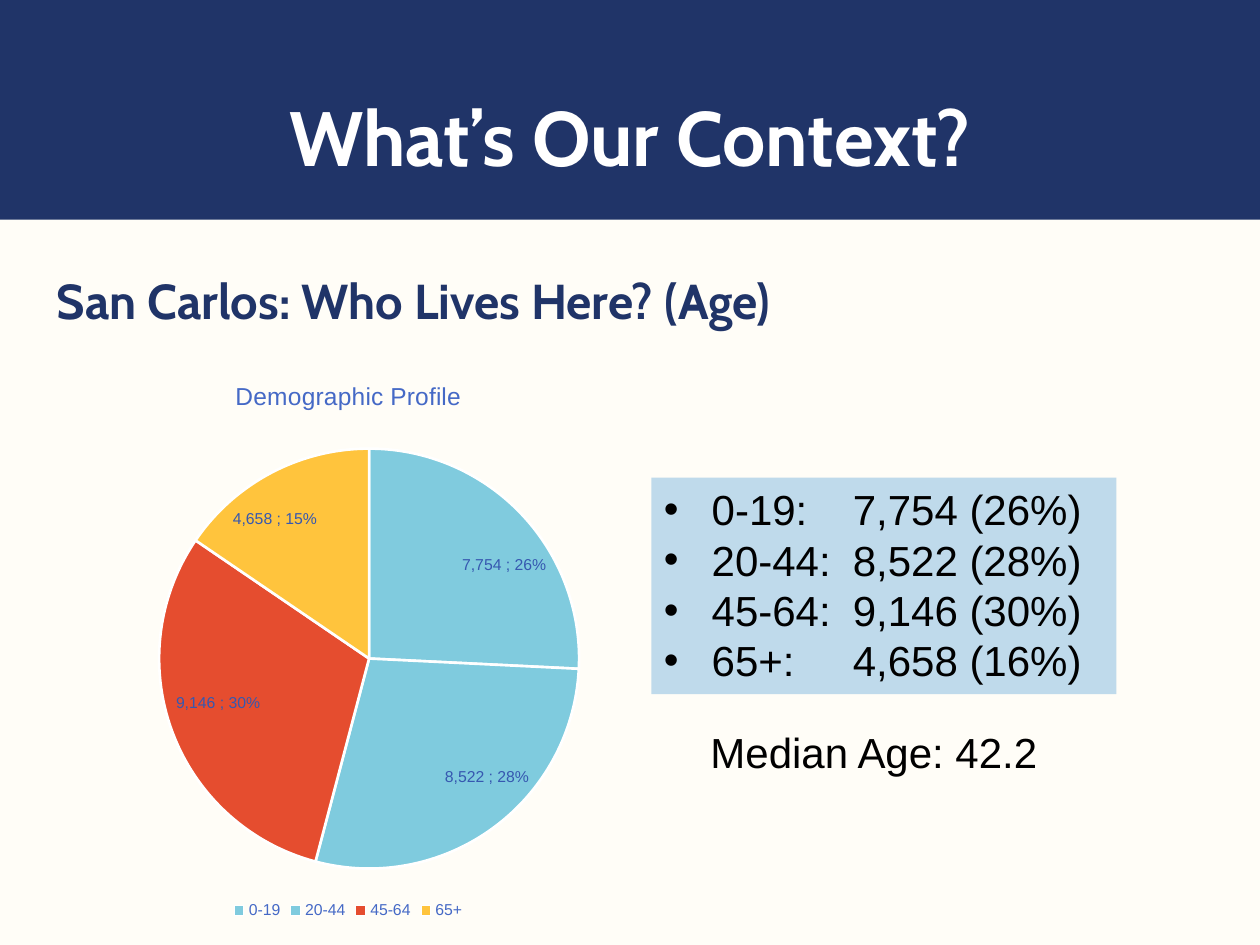
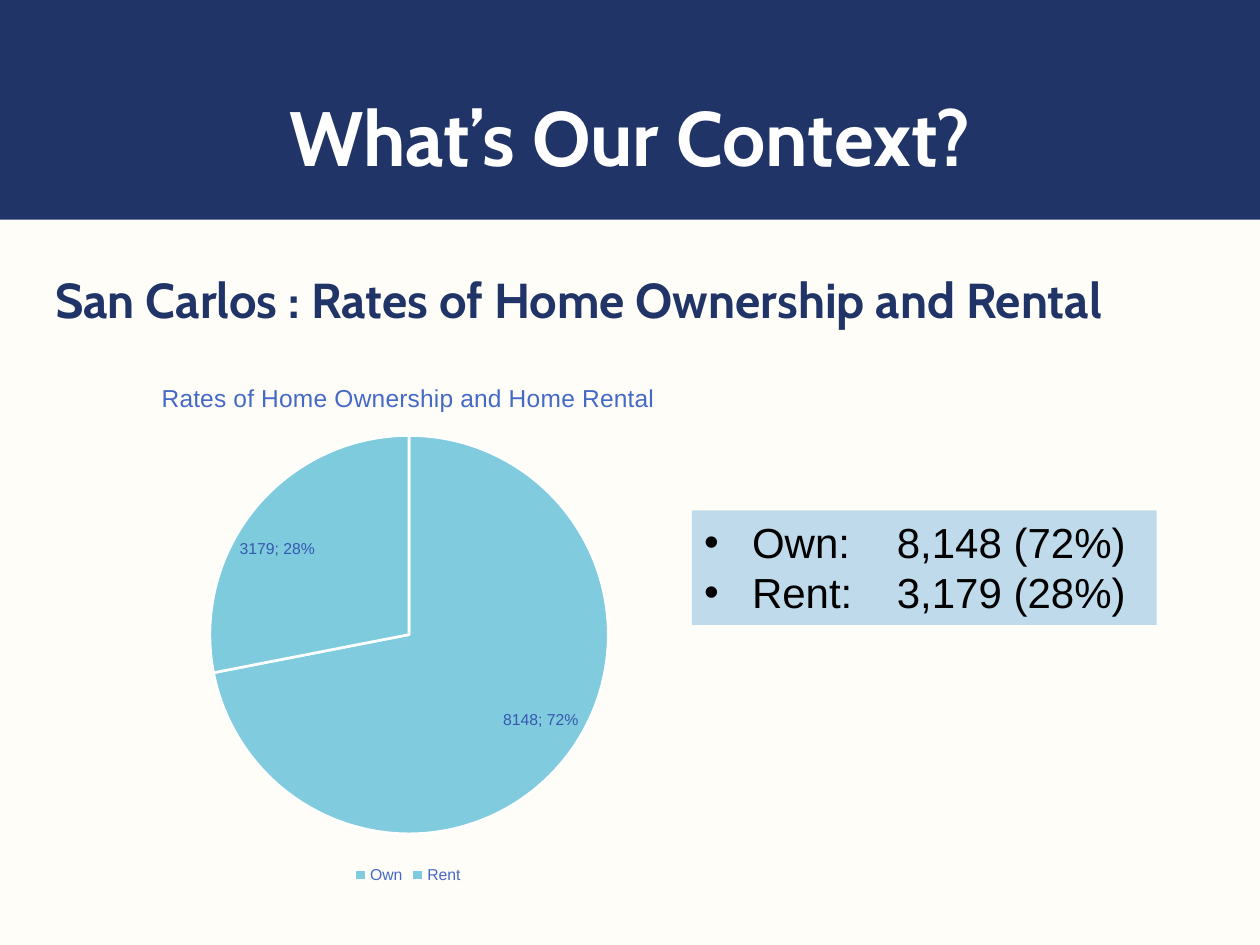
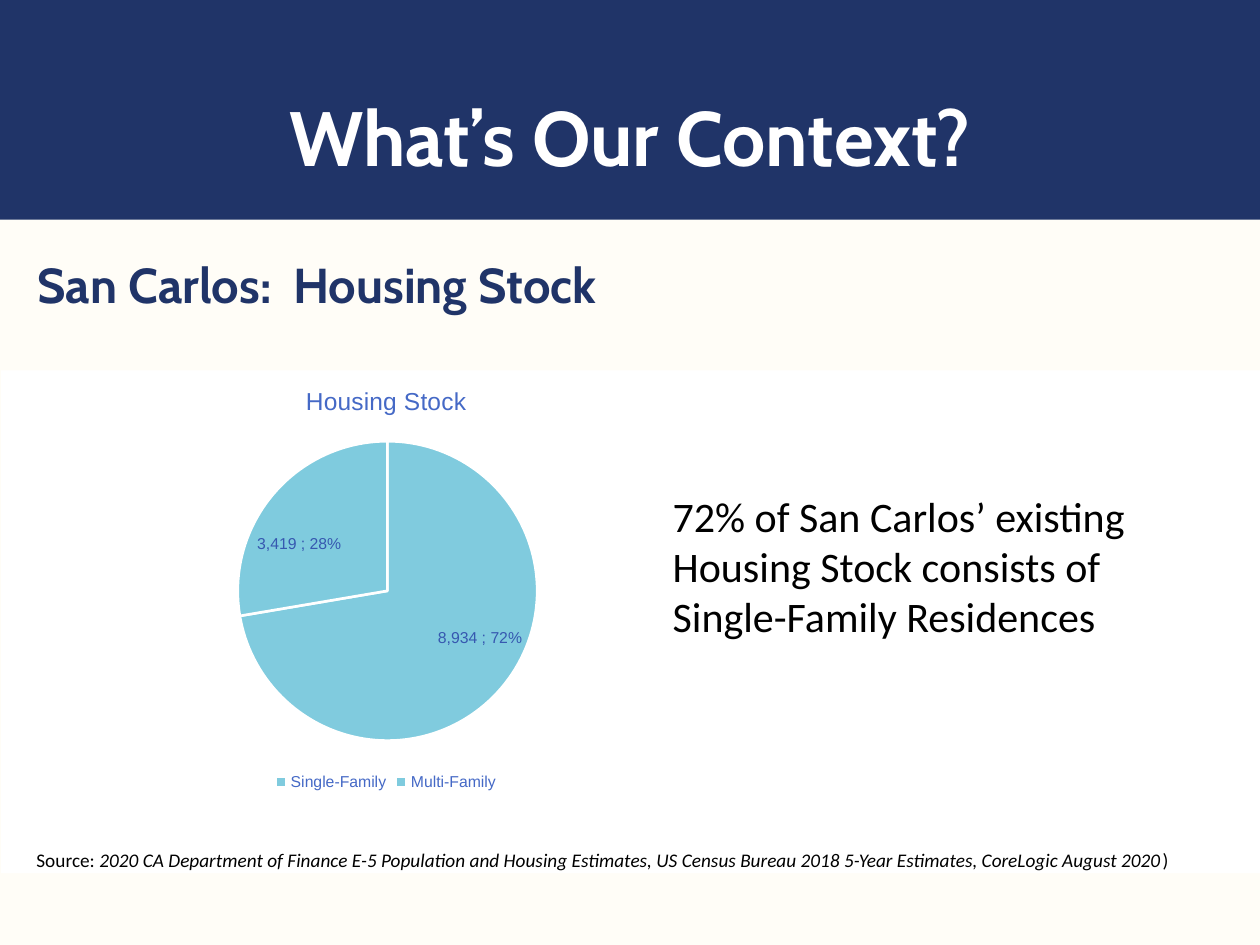
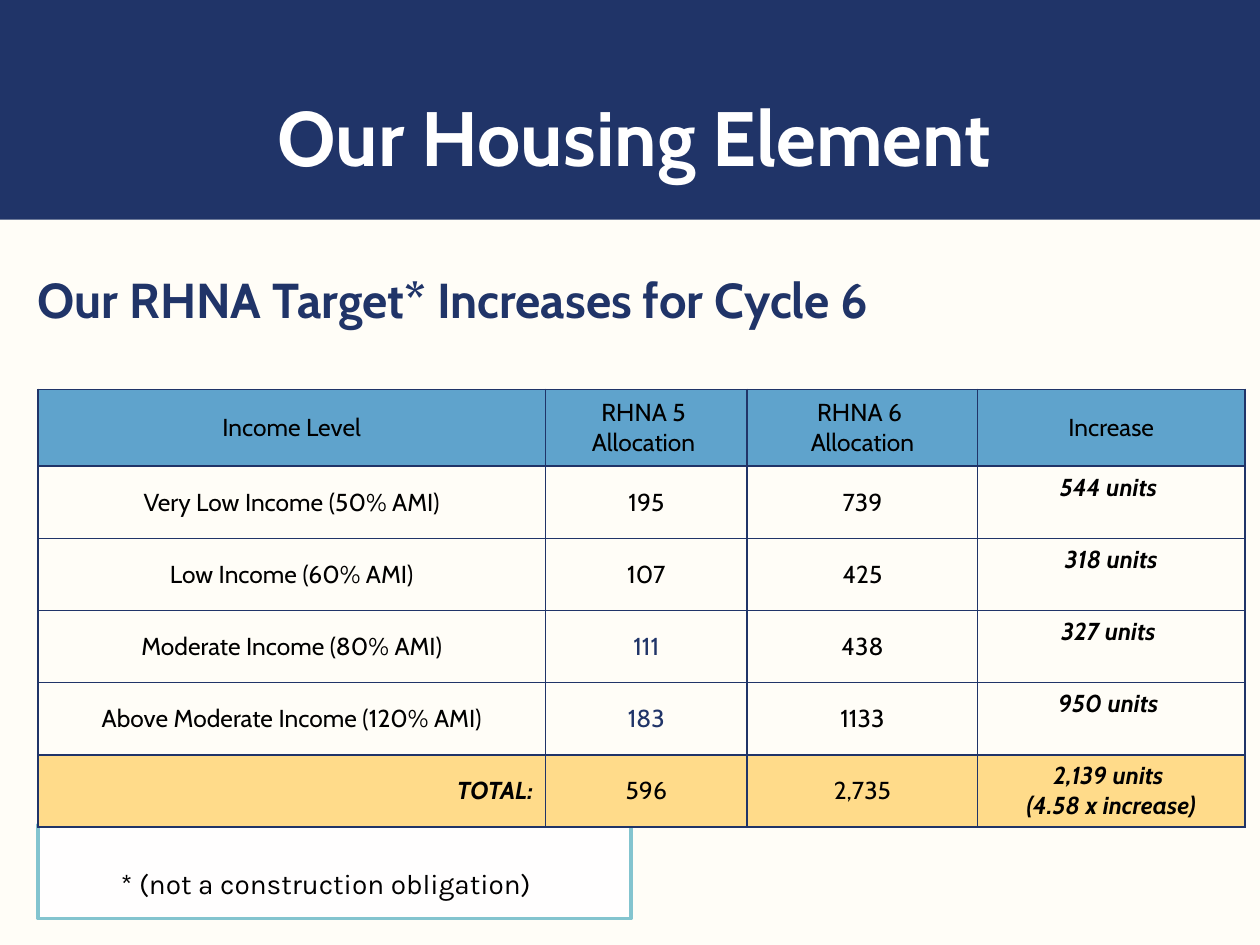
from lxml import etree
from pptx import Presentation
from pptx.chart.data import CategoryChartData
from pptx.dml.color import RGBColor
from pptx.enum import chart as charts, shapes, text
from pptx.oxml.ns import qn
from pptx.util import Inches, Pt

COLORS = {
    "paper": "FFFDF7", "navy": "203468", "white": "FFFFFF", "black": "000000",
    "panel": "BFDAEB", "header": "5FA3CC", "total": "FFDB8A", "note": "83C4CF",
    "caption": "4569C6", "label": "3658B0",
}
SLICES = ("80CBDE", "7FCBDE", "E54D2F", "FFC43D")
THOUSANDS = '_(* #,##0_);_(* \\(#,##0\\);_(* "-"??_);_('
GRID_COLUMNS, GRID_ROWS = 100, 75
CENTER, RIGHT = text.PP_ALIGN.CENTER, text.PP_ALIGN.RIGHT
TOP, MIDDLE, BOTTOM = (text.MSO_ANCHOR.TOP, text.MSO_ANCHOR.MIDDLE,
                       text.MSO_ANCHOR.BOTTOM)


def rgb(color):
    return RGBColor.from_string(COLORS.get(color, color))


def add_xml(parent, tag, **attributes):
    return etree.SubElement(parent, qn(tag),
                            {key: str(value) for key, value in attributes.items()})


def add_tab(props, inches):
    add_xml(add_xml(props, "a:tabLst"), "a:tab", pos=Inches(inches), algn="l")


def style_font(font, size, color="black", face="Arial", bold=False, italic=False):
    font.size, font.name = Pt(size), face
    font.bold, font.italic = bold, italic
    font.color.rgb = rgb(color)


def set_insets(frame, left, top, right, bottom):
    frame.margin_left, frame.margin_top = Inches(left), Inches(top)
    frame.margin_right, frame.margin_bottom = Inches(right), Inches(bottom)


class Deck:
    def __init__(self):
        self.prs = Presentation()
        self.prs.slide_width, self.prs.slide_height = Inches(10), Inches(7.5)
        self.slide = None

    def place(self, column, row, columns, rows):
        """Turn grid units into left, top, width and height."""
        across = self.prs.slide_width / GRID_COLUMNS
        down = self.prs.slide_height / GRID_ROWS
        return (round(column * across), round(row * down),
                round(columns * across), round(rows * down))

    def new_slide(self, title, title_area=(6.9, 4, 86.2, 11)):
        self.slide = self.prs.slides.add_slide(self.prs.slide_layouts[6])
        background = self.slide.background.fill
        background.solid()
        background.fore_color.rgb = rgb("paper")
        self.panel((0, 0, GRID_COLUMNS, 17.43), "navy")
        self.words(title_area, title, 44, "white", "Cabin", bold=True,
                   align=CENTER, anchor=BOTTOM, spacing=0.9)

    def panel(self, area, fill, line=None):
        panel = self.slide.shapes.add_shape(
            shapes.MSO_SHAPE.RECTANGLE, *self.place(*area))
        panel.shadow.inherit = False
        panel.fill.solid()
        panel.fill.fore_color.rgb = rgb(fill)
        if line:
            panel.line.color.rgb = rgb(line)
            panel.line.width = Pt(2)
        else:
            panel.line.fill.background()
        return panel

    def words(self, area, content, size, color="black", face="Arial", bold=False,
              align=None, anchor=TOP, spacing=None, insets=(0.1, 0.05, 0.1, 0.05),
              tab=None):
        """Add one paragraph; content is a string or (string, italic) pairs."""
        frame = self.slide.shapes.add_textbox(*self.place(*area)).text_frame
        frame.word_wrap = True
        frame.vertical_anchor = anchor
        set_insets(frame, *insets)
        paragraph = frame.paragraphs[0]
        paragraph.alignment, paragraph.line_spacing = align, spacing
        if tab:
            add_tab(paragraph._p.get_or_add_pPr(), tab)
        style_font(paragraph.font, size, color, face, bold)
        if isinstance(content, str):
            paragraph.text = content
            return
        paragraph.font.italic = None
        for part, italic in content:
            run = paragraph.add_run()
            run.text, run.font.italic = part, italic

    def heading(self, area, content, indent=0.1, tab=None):
        self.words(area, content, 28, "navy", "Cabin", bold=True, spacing=0.9,
                   insets=(indent, 0.05, 0.1, 0.05), tab=tab)

    def figures(self, area, rows, value_tab):
        """Add a tinted panel of bulleted label and value pairs."""
        frame = self.panel(area, "panel").text_frame
        frame.word_wrap = True
        frame.vertical_anchor = TOP
        set_insets(frame, 0.1, 0.05, 0.1, 0.05)
        frame.text = "\n".join(f"{label}\t{value}" for label, value in rows)
        for paragraph in frame.paragraphs:
            paragraph.alignment = text.PP_ALIGN.LEFT
            props = paragraph._p.get_or_add_pPr()
            props.set("marL", str(Inches(0.38)))
            props.set("indent", str(-Inches(0.38)))
            add_xml(add_xml(props, "a:buClr"), "a:srgbClr", val=COLORS["black"])
            add_xml(props, "a:buFont", typeface="Arial")
            add_xml(props, "a:buChar", char="•")
            add_tab(props, value_tab)
            style_font(paragraph.font, 24)

    def pie(self, area, title, values, plot_area, number_format="General"):
        """Add a pie; plot_area is x, y, w, h as shares of the chart."""
        data = CategoryChartData(number_format=number_format)
        data.categories = list(values)
        data.add_series("Series 1", list(values.values()))
        chart = self.slide.shapes.add_chart(
            charts.XL_CHART_TYPE.PIE, *self.place(*area), data).chart
        style_font(chart.font, 10, "navy")

        chart.has_title = True
        chart.chart_title.include_in_layout = False
        caption = chart.chart_title.text_frame
        caption.text = title
        style_font(caption.paragraphs[0].font, 14, "caption")

        chart.has_legend = True
        chart.legend.position = charts.XL_LEGEND_POSITION.BOTTOM
        chart.legend.include_in_layout = False
        style_font(chart.legend.font, 9, "caption")

        pie = chart.plots[0]
        pie.vary_by_categories = True
        for index, color in enumerate(SLICES[:len(values)]):
            look = pie.series[0].points[index].format
            look.fill.solid()
            look.fill.fore_color.rgb = rgb(color)
            look.line.color.rgb = rgb("white")
            look.line.width = Pt(1.5)

        labels = pie.series[0].data_labels
        labels.show_value = labels.show_percentage = True
        labels.position = charts.XL_LABEL_POSITION.BEST_FIT
        style_font(labels.font, 9, "label")
        separator = etree.Element(qn("c:separator"))
        separator.text = "; "
        labels._element.find(qn("c:showBubbleSize")).addnext(separator)

        plot = chart._chartSpace.chart.plotArea
        for old in plot.findall(qn("c:layout")):
            plot.remove(old)
        layout = etree.Element(qn("c:layout"))
        plot.insert(0, layout)
        manual = add_xml(layout, "c:manualLayout")
        add_xml(manual, "c:layoutTarget", val="inner")
        for side in "xy":
            add_xml(manual, f"c:{side}Mode", val="edge")
        for side, share in zip("xywh", plot_area):
            add_xml(manual, f"c:{side}", val=share)

    def table(self, corner, widths, heights, rows):
        area = self.place(*corner, sum(widths), sum(heights))
        table = self.slide.shapes.add_table(len(rows), len(widths), *area).table
        table.first_row = table.horz_banding = False
        for column, width in zip(table.columns, widths):
            column.width = self.place(0, 0, width, 0)[2]
        for row, height in zip(table.rows, heights):
            row.height = self.place(0, 0, 0, height)[3]
        last = len(rows) - 1
        for r, row in enumerate(rows):
            fill = {0: "header", last: "total"}.get(r)
            for c, content in enumerate(row):
                is_total = r == last and c == 0
                is_increase = r > 0 and c == 3
                self.cell(table.cell(r, c), content, fill,
                          color="navy" if c == 1 and r in (3, 4) else "black",
                          strong=is_total or is_increase,
                          align=RIGHT if is_total else CENTER,
                          anchor=TOP if is_increase and r < last else MIDDLE)

    def cell(self, cell, content, fill, color, strong, align, anchor):
        cell.text = content
        cell.vertical_anchor = anchor
        for paragraph in cell.text_frame.paragraphs:
            paragraph.alignment = align
            style_font(paragraph.font, 14, color, "Cabin", strong, strong)
        props = cell._tc.get_or_add_tcPr()
        for side in "LRTB":
            border = add_xml(props, f"a:ln{side}", w=Pt(1))
            add_xml(add_xml(border, "a:solidFill"), "a:srgbClr", val=COLORS["navy"])
        if fill:
            cell.fill.solid()
            cell.fill.fore_color.rgb = rgb(fill)
        else:
            cell.fill.background()

    def footnote(self, area, content):
        """Add an outlined, slightly see-through note."""
        note = self.panel(area, "white", "note")
        tint = note._element.spPr.find(qn("a:solidFill"))[0]
        add_xml(tint, "a:alpha", val=90000)
        frame = note.text_frame
        frame.word_wrap = True
        frame.vertical_anchor = TOP
        set_insets(frame, 0.66, 0.36, 0.66, 0.12)
        frame.text = content
        paragraph = frame.paragraphs[0]
        paragraph.alignment = text.PP_ALIGN.LEFT
        paragraph.line_spacing = 0.9
        style_font(paragraph.font, 16, face="Karla")


def age_slide(deck):
    deck.new_slide("What’s Our Context?")
    deck.heading((0, 21.5, 100, 47.8), "San Carlos: Who Lives Here? (Age)", 0.45)
    deck.pie((-1.8, 28.4, 58.9, 45), "Demographic Profile",
             {"0-19": 7754, "20-44": 8522, "45-64": 9146, "65+": 4658},
             (0.245, 0.16, 0.566, 0.741), THOUSANDS)
    deck.figures((51.7, 37.9, 36.9, 17.2), [
        ("0-19:", "7,754 (26%)"), ("20-44:", "8,522 (28%)"),
        ("45-64:", "9,146 (30%)"), ("65+:", "4,658 (16%)")], 1.5)
    deck.words((55.4, 57.2, 33.3, 5), "Median Age: 42.2", 24)


def ownership_slide(deck):
    deck.new_slide("What’s Our Context?")
    deck.heading((3.4, 21.4, 96.6, 47.8),
                 "San Carlos : Rates of Home Ownership and Rental")
    deck.pie((-2.6, 28.6, 70, 42), "Rates of Home Ownership and Home Rental",
             {"Own": 8148, "Rent": 3179}, (0.275, 0.142, 0.452, 0.753))
    deck.figures((54.9, 40.5, 36.9, 9.1),
                 [("Own:", "8,148 (72%)"), ("Rent:", "3,179 (28%)")], 1.53)


def stock_slide(deck):
    deck.new_slide("What’s Our Context?")
    deck.panel((0.1, 29.4, 100, 39.9), "white")
    deck.heading((2, 20.2, 98, 52.4), "San Carlos:\tHousing Stock", tab=2.03)
    even = (0.1, 0.1, 0.1, 0.1)
    deck.words((52.4, 37.9, 43.2, 14.1),
               "72% of San Carlos’ existing Housing Stock consists of "
               "Single-Family Residences", 24, face="Calibri", insets=even)
    deck.words((1.9, 66.4, 96.8, 3.9), [
        ("Source: ", False),
        ("2020 CA Department of Finance E-5 Population and Housing Estimates, "
         "US Census Bureau 2018 5-Year Estimates, CoreLogic August 2020", True),
        (")", False)], 11, face="Calibri", insets=even)
    deck.pie((3.5, 29, 54.3, 34.2), "Housing Stock",
             {"Single-Family": 8934, "Multi-Family": 3419},
             (0.283, 0.176, 0.438, 0.695), THOUSANDS)


def target_slide(deck):
    deck.new_slide("Our Housing Element ", (4.5, 3.3, 93.1, 11.7))
    deck.footnote((3, 65.5, 47.1, 7.4), "* (not a construction obligation)")
    deck.heading((1.1, 21.4, 98.9, 47.8),
                 "Our RHNA Target* Increases for Cycle 6", 0.19)
    deck.table((3, 30.9), (40.3, 16, 18.3, 21.2), [6.1] + [5.73] * 5, [
        ("Income Level", "RHNA 5 \nAllocation ", "RHNA 6 \nAllocation", "Increase"),
        ("Very Low Income (50% AMI)", "195", "739", "544 units "),
        ("Low Income (60% AMI)", "107", "425", "318 units"),
        ("Moderate Income (80% AMI)", "111", "438", "327 units "),
        ("Above Moderate Income (120% AMI)", "183", "1133", "950 units "),
        ("TOTAL:", "596", "2,735", "2,139 units \n(4.58 x increase)")])


def main():
    deck = Deck()
    for build in (age_slide, ownership_slide, stock_slide, target_slide):
        build(deck)
    deck.prs.save("out.pptx")


if __name__ == "__main__":
    main()
